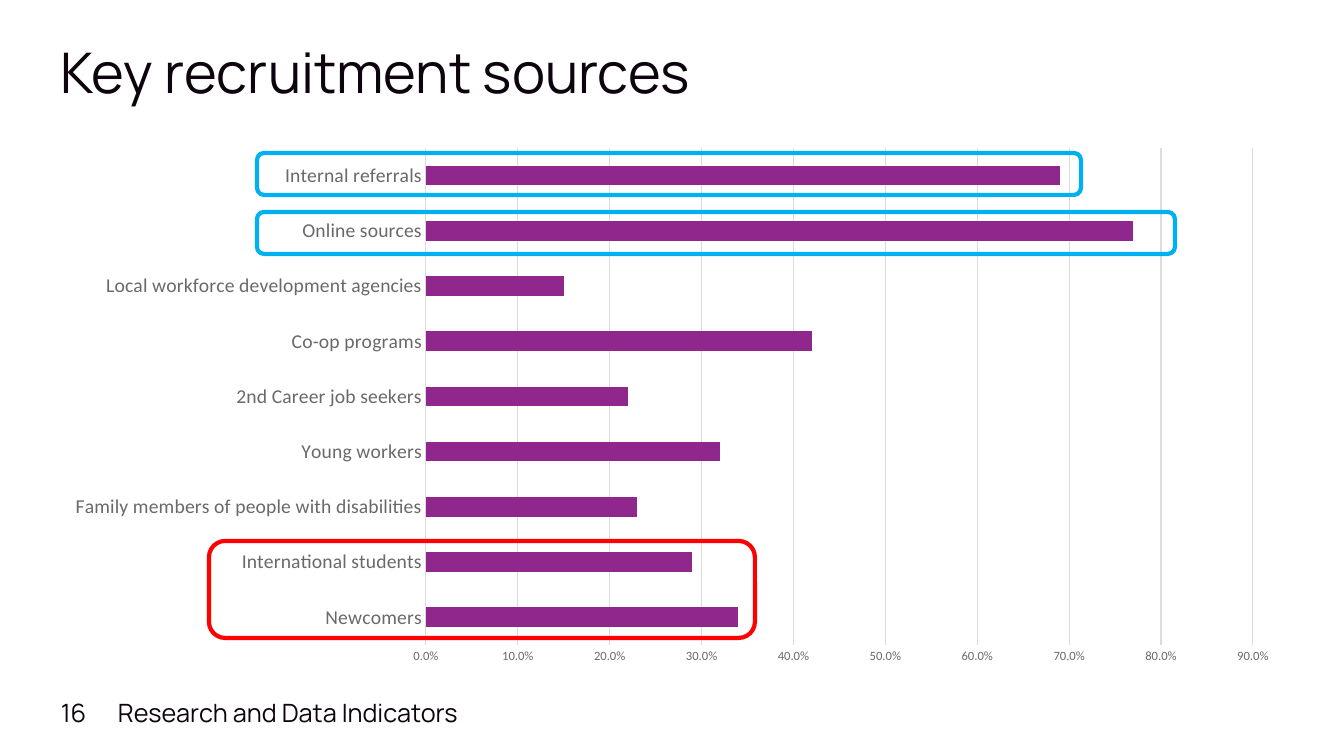
"""Build the slide on key recruitment sources."""
from lxml.etree import SubElement
from pptx import Presentation
from pptx.chart.data import CategoryChartData
from pptx.dml.color import RGBColor
from pptx.enum.chart import XL_CHART_TYPE, XL_TICK_MARK
from pptx.enum.shapes import MSO_SHAPE
from pptx.enum.text import MSO_ANCHOR
from pptx.oxml.ns import qn
from pptx.util import Emu, Pt

SLIDE_WIDTH, SLIDE_HEIGHT = 1344, 756
EMU_PER_PX = 12192000 / SLIDE_WIDTH
COLORS = {
    "ink": "0E040E", "text": "181818", "label": "696969", "grid": "DCDCDC",
    "bar": "90278D", "blue": "00B0F0", "red": "FF0000",
}
CHART_BOX = (51, 137, 1243, 538)
PLOT_BOX = (426, 148, 827, 497)
SOURCES = {
    "Newcomers": 0.34,
    "International students": 0.29,
    "Family members of people with disabilities": 0.23,
    "Young workers": 0.32,
    "2nd Career job seekers": 0.22,
    "Co-op programs": 0.42,
    "Local workforce development agencies": 0.15,
    "Online sources": 0.77,
    "Internal referrals": 0.69,
}
HIGHLIGHTS = [
    ((257, 212, 918, 42), "blue"),
    ((257, 153, 824, 42), "blue"),
    ((209, 541, 546, 97), "red"),
]


def px(length):
    return Emu(round(length * EMU_PER_PX))


def color(name):
    return RGBColor.from_string(COLORS[name])


def set_font(font, typeface, size, color_name):
    font.name = typeface
    font.size = Pt(size)
    font.color.rgb = color(color_name)


def set_line(line, color_name, width):
    line.color.rgb = color(color_name)
    line.width = Pt(width)


def add_text(slide, box, text, size, anchor=MSO_ANCHOR.MIDDLE, spacing=1.0):
    frame = slide.shapes.add_textbox(*map(px, box)).text_frame
    frame.word_wrap = True
    frame.vertical_anchor = anchor
    paragraph = frame.paragraphs[0]
    paragraph.line_spacing = spacing
    run = paragraph.add_run()
    run.text = text
    set_font(run.font, "Manrope", size, "ink")


def place_plot(chart):
    """Fix the inner plot area at PLOT_BOX within CHART_BOX."""
    left, top, width, height = CHART_BOX
    plot_left, plot_top, plot_width, plot_height = PLOT_BOX
    plot_area = chart.plots[0]._element.getparent()
    layout = plot_area.find(qn("c:layout"))
    if layout is None:
        layout = SubElement(plot_area, qn("c:layout"))
        plot_area.insert(0, layout)
    manual = SubElement(layout, qn("c:manualLayout"))
    settings = {
        "layoutTarget": "inner", "xMode": "edge", "yMode": "edge",
        "x": (plot_left - left) / width, "y": (plot_top - top) / height,
        "w": plot_width / width, "h": plot_height / height,
    }
    for tag, value in settings.items():
        SubElement(manual, qn(f"c:{tag}")).set("val", str(value))


def style_axis(axis, size):
    axis.major_tick_mark = axis.minor_tick_mark = XL_TICK_MARK.NONE
    set_font(axis.tick_labels.font, "Calibri", size, "label")


def add_sources_chart(slide):
    data = CategoryChartData(number_format="0.0%")
    data.categories = list(SOURCES)
    data.add_series("Series 1", list(SOURCES.values()))
    chart = slide.shapes.add_chart(
        XL_CHART_TYPE.BAR_CLUSTERED, *map(px, CHART_BOX), data).chart
    chart.has_title = False
    chart.has_legend = False
    set_font(chart.font, "Calibri", 10, "text")

    plot = chart.plots[0]
    plot.gap_width = 182
    plot.vary_by_categories = False
    fill = plot.series[0].format.fill
    fill.solid()
    fill.fore_color.rgb = color("bar")

    category_axis, value_axis = chart.category_axis, chart.value_axis
    style_axis(category_axis, 14)
    category_axis.has_major_gridlines = False
    set_line(category_axis.format.line, "grid", 0.75)
    style_axis(value_axis, 9)
    value_axis.minimum_scale, value_axis.maximum_scale = 0, 0.9
    value_axis.major_unit = 0.1
    value_axis.has_major_gridlines = True
    set_line(value_axis.major_gridlines.format.line, "grid", 0.75)
    value_axis.format.line.fill.background()
    value_axis.tick_labels.number_format = "0.0%"
    value_axis.tick_labels.number_format_is_linked = False
    place_plot(chart)


def add_highlight(slide, box, color_name):
    shape = slide.shapes.add_shape(MSO_SHAPE.ROUNDED_RECTANGLE, *map(px, box))
    shape.shadow.inherit = False
    shape.fill.background()
    set_line(shape.line, color_name, 3)


def main():
    presentation = Presentation()
    presentation.slide_width = px(SLIDE_WIDTH)
    presentation.slide_height = px(SLIDE_HEIGHT)
    slide = presentation.slides.add_slide(presentation.slide_layouts[6])
    add_text(slide, (51, 40, 1243, 61), "Key recruitment sources", 40,
             MSO_ANCHOR.TOP, 0.9)
    add_text(slide, (51, 692, 57, 40), "16", 18)
    add_text(slide, (108, 692, 370, 40), "Research and Data Indicators", 18)
    add_sources_chart(slide)
    for box, color_name in HIGHLIGHTS:
        add_highlight(slide, box, color_name)
    presentation.save("out.pptx")


if __name__ == "__main__":
    main()
